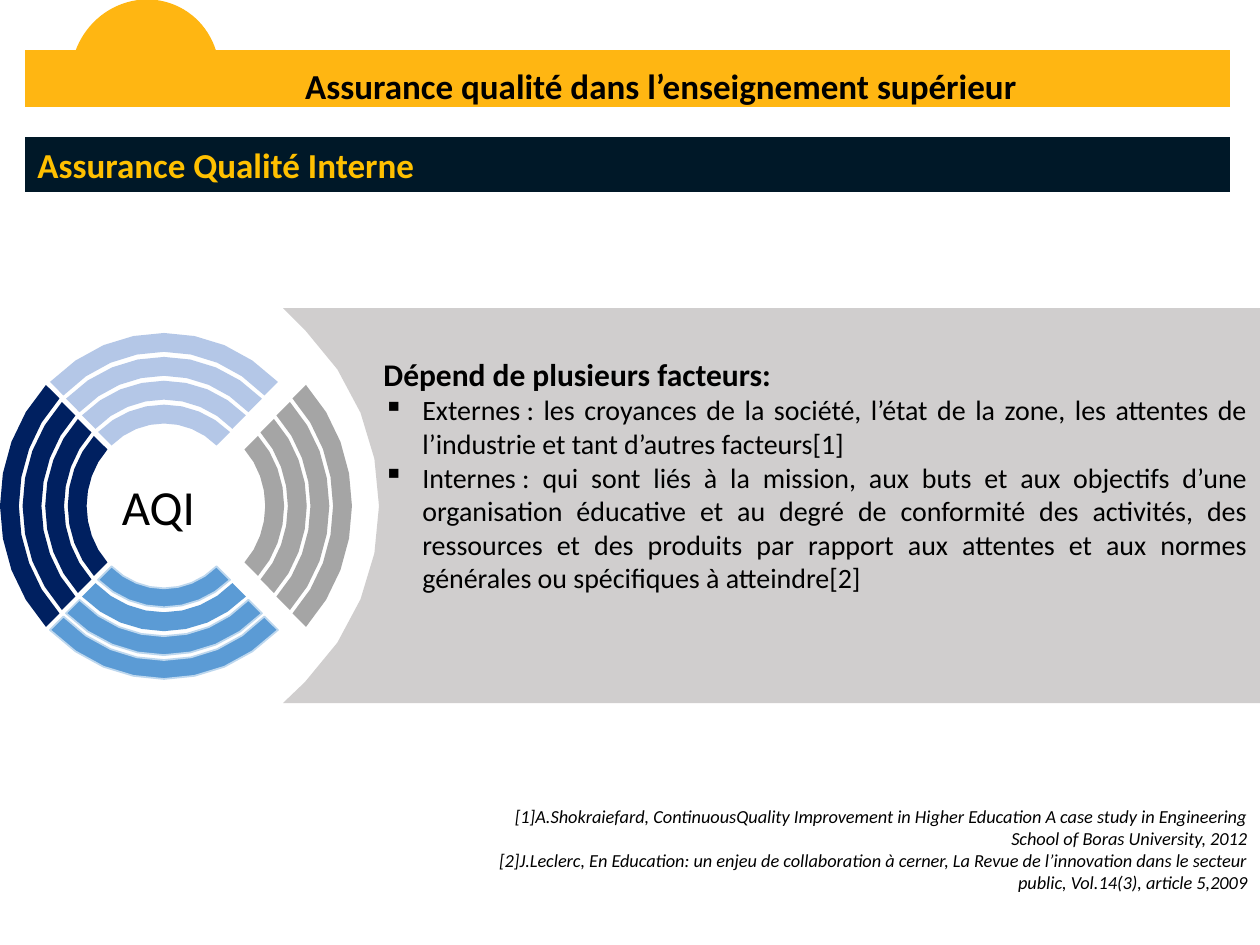
from dataclasses import dataclass

from lxml.etree import SubElement
from pptx import Presentation
from pptx.dml.color import RGBColor
from pptx.enum.shapes import MSO_SHAPE
from pptx.enum.text import MSO_ANCHOR, MSO_AUTO_SIZE, PP_ALIGN
from pptx.oxml.ns import qn
from pptx.util import Pt

PX = 914400 / 126
FINE = 10  # freeform units per px
CURVE_STEPS = 8


@dataclass(frozen=True)
class Theme:
    font: str = "Calibri"
    black: str = "000000"
    gold: str = "FFB612"
    yellow: str = "FFC000"
    night: str = "001828"
    navy: str = "002060"
    pale_blue: str = "B4C7E7"
    blue: str = "5B9BD5"
    blue_edge: str = "BDD7EE"
    gray: str = "A5A5A5"
    panel: str = "D0CECE"
    title: float = 20
    label: float = 28
    heading: float = 18
    body: float = 16
    reference: float = 10.5


theme = Theme()


def curve(distance, half, depth):
    """Return (across, outward) points bulging by depth beyond a chord at distance."""
    points = []
    for step in range(CURVE_STEPS + 1):
        t = step / CURVE_STEPS
        u = 1 - t
        across = half * (u**3 - t**3 + 3 * 0.44 * u * t * (u - t))
        points.append((across, distance + 3 * depth * u * t * 4 / 3))
    return points


def write(shape, lines, size, align, anchor=MSO_ANCHOR.TOP, color=theme.black,
          bold=False, italic=False):
    text_frame = shape.text_frame
    text_frame.text = "\n".join(lines)
    text_frame.word_wrap = True
    text_frame.auto_size = MSO_AUTO_SIZE.NONE
    text_frame.vertical_anchor = anchor
    for paragraph in text_frame.paragraphs:
        paragraph.alignment = align
        for run in paragraph.runs:
            run.font.name = theme.font
            run.font.size = Pt(size)
            run.font.bold = bold
            run.font.italic = italic
            run.font.color.rgb = RGBColor.from_string(color)


presentation = Presentation()
presentation.slide_width = round(1260 * PX)
presentation.slide_height = round(945 * PX)
slide = presentation.slides.add_slide(presentation.slide_layouts[5])
shapes = slide.shapes

# Header bars, the dome behind the title and the label of the ring
blocks = []
for kind, box, fill in [
    (MSO_SHAPE.RECTANGLE, (25, 50, 1205, 57), theme.gold),
    (MSO_SHAPE.CHORD, (68, 2, 154, 148), theme.gold),
    (MSO_SHAPE.RECTANGLE, (25, 137, 1205, 55), theme.night),
    (MSO_SHAPE.OVAL, (60, 407, 208, 197), None),
]:
    shape = shapes.add_shape(kind, *(round(value * PX) for value in box))
    shape.shadow.inherit = False
    shape.line.fill.background()
    if fill:
        shape.fill.solid()
        shape.fill.fore_color.rgb = RGBColor.from_string(fill)
    else:
        shape.fill.background()
    blocks.append(shape)
title_bar, dome, section_bar, ring_label = blocks
dome.rotation = 112.9

title = shapes.title
title.left, title.top, title.width, title.height = (
    round(value * PX) for value in (276, 58, 770, 55))
shapes._spTree.append(title._element)
write(title, ["Assurance qualité dans l’enseignement supérieur"],
      theme.title, PP_ALIGN.CENTER, bold=True)
write(section_bar, ["Assurance Qualité Interne"], theme.title, PP_ALIGN.LEFT,
      color=theme.yellow, bold=True)
write(ring_label, ["AQI "], theme.label, PP_ALIGN.CENTER, MSO_ANCHOR.MIDDLE)

# Four sectors of four bands: outward direction, colour,
# then distance, half width and depth of the outer curve, and their steps inward
center_x, center_y = 164, 506
upright = ((124, 114, 49), (16.7, 16, 7.2))
outlines = []
for direction, color, (first, step) in [
    ((0, -1), theme.pale_blue, upright),
    ((1, 0), theme.gray, ((142, 121, 46), (16, 17, 6.6))),
    ((0, 1), theme.blue, upright),
    ((-1, 0), theme.navy, ((118, 121, 46), (16, 17, 6.6))),
]:
    dx, dy = direction
    for band in range(4):
        distance, half, depth = (a - band * b for a, b in zip(first, step))
        edge = curve(distance, half, depth)
        edge += reversed(curve(distance - 13.5, half - 13.5, depth - 5.4))
        points = [(center_x + dx * out + dy * across, center_y + dy * out + dx * across)
                  for across, out in edge]
        edged = color == theme.blue and band != 2
        outlines.append((points, color, theme.blue_edge if edged else None))

panel_edge = [(out, center_y - across) for across, out in curve(305, 176, 74)]
panel = [(1260, 703), (1260, 308), (283, 308)] + panel_edge + [(283, 703)]
outlines.append((panel, theme.panel, None))

for points, fill, line in outlines:
    start, *rest = [(x * FINE, y * FINE) for x, y in points]
    builder = shapes.build_freeform(*start, scale=PX / FINE)
    builder.add_line_segments(rest, close=True)
    shape = builder.convert_to_shape()
    shape.shadow.inherit = False
    shape.fill.solid()
    shape.fill.fore_color.rgb = RGBColor.from_string(fill)
    if line:
        shape.line.color.rgb = RGBColor.from_string(line)
        shape.line.width = Pt(1)
    else:
        shape.line.fill.background()

# Factors and references
factors, references = (
    shapes.add_textbox(*(round(value * PX) for value in box))
    for box in [(371, 349, 889, 254), (457, 799, 803, 102)])
write(factors, [
    "Dépend de plusieurs facteurs:",
    "Externes\u00a0: les croyances de la société, l’état de la zone, les attentes de "
    "l’industrie et tant d’autres facteurs[1]",
    "Internes\u00a0: qui sont liés à la mission, aux buts et aux objectifs d’une "
    "organisation éducative et au degré de conformité des activités, des ressources "
    "et des produits par rapport aux attentes et aux normes générales ou spécifiques "
    "à atteindre[2]",
], theme.body, PP_ALIGN.JUSTIFY)
heading, *bullets = factors.text_frame.paragraphs
heading.runs[0].font.size = Pt(theme.heading)
heading.runs[0].font.bold = True
indent = round(39 * PX)
for paragraph in bullets:
    properties = paragraph._p.get_or_add_pPr()
    properties.set("marL", str(indent))
    properties.set("indent", str(-indent))
    SubElement(properties, qn("a:buChar")).set("char", "▪")

write(references, [
    "[1]A.Shokraiefard, ContinuousQuality Improvement in Higher Education A case study "
    "in Engineering School of Boras University, 2012",
    "[2]J.Leclerc, En Education: un enjeu de collaboration à cerner, La Revue de "
    "l’innovation dans le secteur public, Vol.14(3), article 5,2009",
], theme.reference, PP_ALIGN.RIGHT, italic=True)

presentation.save("out.pptx")
